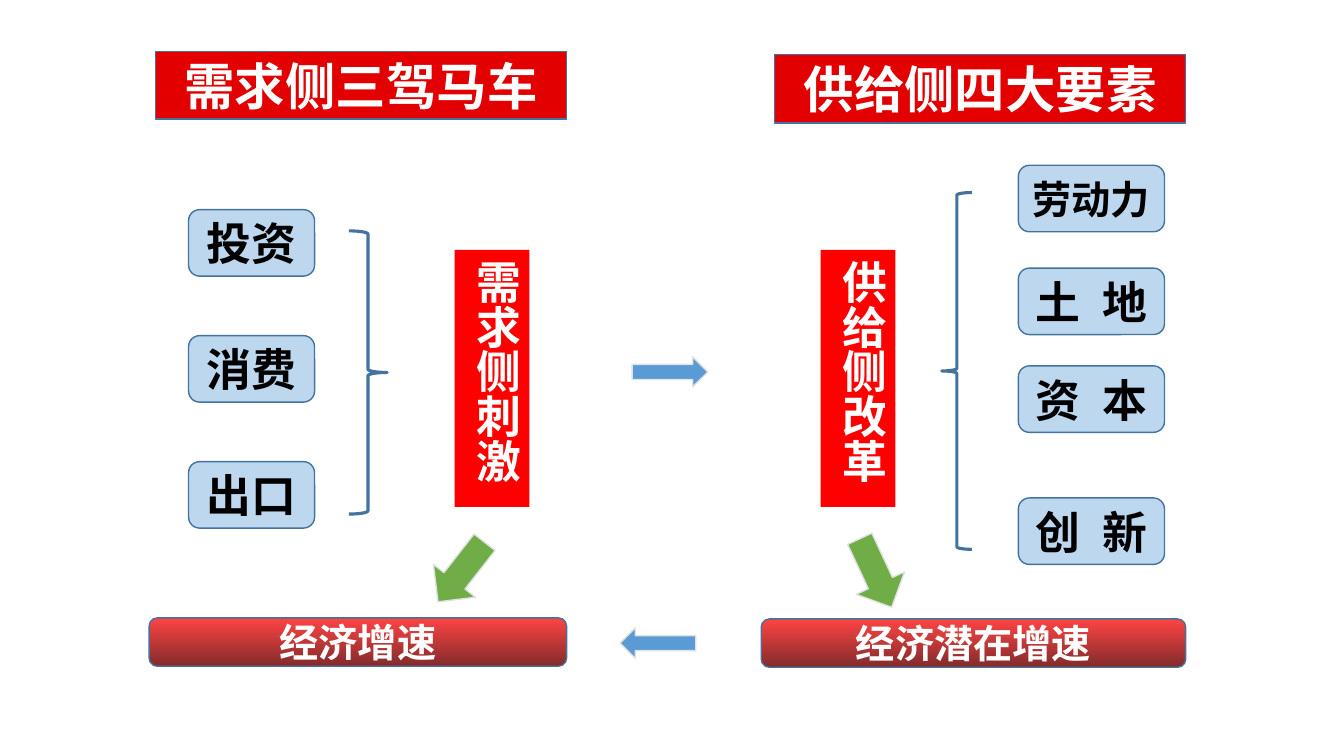
from lxml import etree
from pptx import Presentation
from pptx.dml.color import RGBColor
from pptx.enum.shapes import MSO_SHAPE
from pptx.enum.text import MSO_ANCHOR, MSO_AUTO_SIZE, PP_ALIGN
from pptx.oxml.ns import qn
from pptx.util import Inches, Pt

PROCESS = MSO_SHAPE.FLOWCHART_PROCESS
ROUNDED = MSO_SHAPE.ROUNDED_RECTANGLE
RECTANGLE = MSO_SHAPE.RECTANGLE
BRACE = MSO_SHAPE.RIGHT_BRACE
ARROW = MSO_SHAPE.RIGHT_ARROW
TOP, MIDDLE = MSO_ANCHOR.TOP, MSO_ANCHOR.MIDDLE
LEFT, CENTER = PP_ALIGN.LEFT, PP_ALIGN.CENTER
FIT_SHAPE = MSO_AUTO_SIZE.SHAPE_TO_FIT_TEXT

WHITE = RGBColor(0xFF, 0xFF, 0xFF)
BLACK = RGBColor(0x00, 0x00, 0x00)
RED = RGBColor(0xFF, 0x00, 0x00)
TITLE_RED = RGBColor(0xE3, 0x00, 0x00)
TITLE_DARK = RGBColor(0x76, 0x03, 0x03)
RESULT_RED = RGBColor(0xFE, 0x44, 0x44)
RESULT_DARK = RGBColor(0x83, 0x2B, 0x2B)
PALE_BLUE = RGBColor(0xBD, 0xD7, 0xEE)
BLUE = RGBColor(0x5B, 0x9B, 0xD5)
OUTLINE = RGBColor(0x43, 0x73, 0x9E)
GREEN = RGBColor(0x70, 0xAD, 0x47)
ARROW_OUTLINE = RGBColor(0xDF, 0xE1, 0xE3)


class Diagram:
    latin_font = "Calibri"
    chinese_font = "Noto Sans CJK SC"

    def __init__(self, slide):
        self.slide = slide

    def shape(self, kind, box, outline=OUTLINE, weight=1):
        shape = self.slide.shapes.add_shape(kind, *map(Inches, box))
        shape.shadow.inherit = False
        if outline is None:
            shape.line.fill.background()
        else:
            shape.line.color.rgb = outline
            shape.line.width = Pt(weight)
        return shape

    def solid(self, shape, color):
        shape.fill.solid()
        shape.fill.fore_color.rgb = color

    def gradient(self, shape, start, first, last):
        shape.fill.gradient()
        shape.fill.gradient_angle = 270
        stops = zip(shape.fill.gradient_stops, (start, 1), (first, last))
        for stop, position, color in stops:
            stop.position = position
            stop.color.rgb = color

    def label(self, shape, text, size, color, font=None, align=CENTER, anchor=MIDDLE, spacing=0):
        frame = shape.text_frame
        frame.word_wrap = True
        frame.vertical_anchor = anchor
        paragraph = frame.paragraphs[0]
        paragraph.text = text
        paragraph.alignment = align
        paragraph.font.size = Pt(size)
        paragraph.font.bold = True
        paragraph.font.color.rgb = color
        paragraph.font.name = font or self.latin_font
        properties = paragraph._p.pPr.find(qn("a:defRPr"))
        etree.SubElement(properties, qn("a:ea"), typeface=self.chinese_font)
        if spacing:
            run_properties = paragraph.runs[0]._r.get_or_add_rPr()
            run_properties.set("spc", str(spacing * 100))

    def title(self, box, text, font=None):
        shape = self.shape(PROCESS, box)
        self.gradient(shape, 0.99, TITLE_RED, TITLE_DARK)
        self.label(shape, text, 36, WHITE, font)

    def result(self, box, text):
        shape = self.shape(ROUNDED, box)
        self.gradient(shape, 0, RESULT_RED, RESULT_DARK)
        self.label(shape, text, 28, WHITE)

    def factor(self, left, top, width, text, size=32, spacing=0):
        shape = self.shape(ROUNDED, (left, top, width, 0.66))
        self.solid(shape, PALE_BLUE)
        self.label(shape, text, size, BLACK, spacing=spacing)

    def pillar(self, left, text):
        shape = self.shape(RECTANGLE, (left, 2.48, 0.74, 2.55), outline=None)
        self.solid(shape, RED)
        self.label(shape, text, 32, WHITE, align=LEFT, anchor=TOP)
        shape.text_frame.auto_size = FIT_SHAPE
        shape.text_frame._txBody.bodyPr.set("vert", "eaVert")

    def brace(self, box, rotation=0):
        shape = self.shape(BRACE, box, weight=2.25)
        shape.fill.background()
        shape.rotation = rotation

    def arrow(self, left, top, height, color, rotation=0):
        shape = self.shape(ARROW, (left, top, 0.75, height), ARROW_OUTLINE)
        self.solid(shape, color)
        shape.rotation = rotation


def main():
    presentation = Presentation()
    presentation.slide_width = Inches(13.33)
    presentation.slide_height = Inches(7.5)
    diagram = Diagram(presentation.slides.add_slide(presentation.slide_layouts[6]))

    diagram.title((1.54, 0.51, 4.08, 0.67), "需求侧三驾马车", Diagram.chinese_font)
    diagram.title((7.68, 0.54, 4.08, 0.68), "供给侧四大要素")

    diagram.brace((3.46, 2.29, 0.38, 2.81))
    diagram.brace((9.34, 1.91, 0.3, 3.54), 180)

    diagram.result((7.55, 6.14, 4.21, 0.48), "经济潜在增速")
    diagram.result((1.48, 6.13, 4.14, 0.48), "经济增速")

    diagram.arrow(4.2, 5.41, 0.53, GREEN, 128)
    diagram.arrow(8.31, 5.42, 0.53, GREEN, 65)
    diagram.arrow(6.15, 6.23, 0.3, BLUE, 180)
    diagram.arrow(6.27, 3.54, 0.3, BLUE)

    for index, text in enumerate(("投资", "消费", "出口")):
        diagram.factor(1.87, 2.08 + 1.25 * index, 1.25, text)

    diagram.factor(10.1, 1.64, 1.45, "劳动力", size=28)
    for top, text in ((2.66, "土 地"), (3.63, "资 本"), (4.94, "创 新")):
        diagram.factor(10.1, top, 1.45, text, spacing=4)

    diagram.pillar(4.51, "需求侧刺激")
    diagram.pillar(8.14, "供给侧改革")

    presentation.save("out.pptx")


if __name__ == "__main__":
    main()
